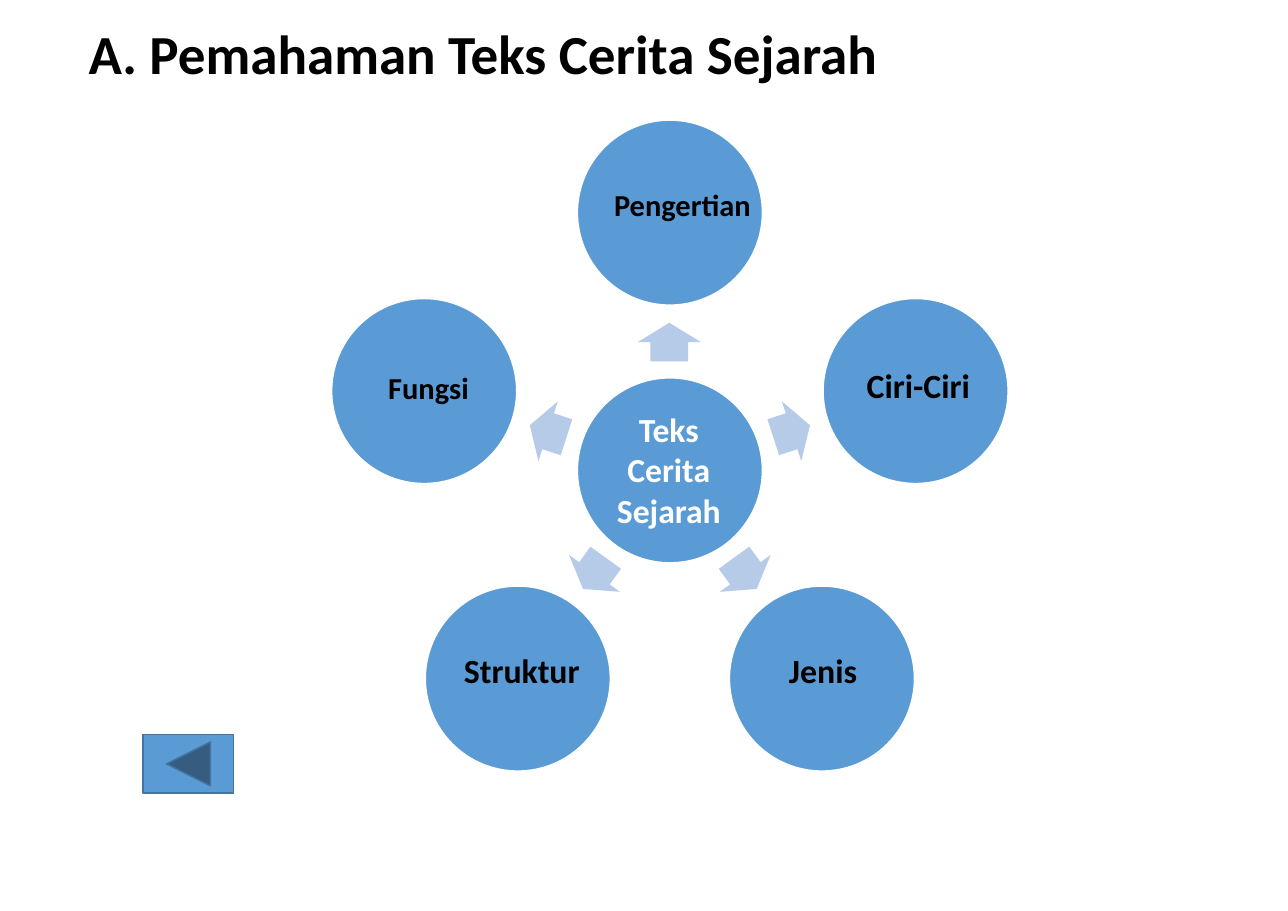
import math
import pptx
import pptx.util
from pptx.dml.color import RGBColor
from pptx.enum.shapes import MSO_SHAPE
from pptx.enum.text import MSO_ANCHOR, PP_ALIGN

PX = 9144
BLUE = RGBColor(0x5B, 0x9B, 0xD5)
PALE = RGBColor(0xB5, 0xCB, 0xE7)
EDGE = RGBColor(0x43, 0x73, 0x9E)
WHITE = RGBColor(0xFF, 0xFF, 0xFF)
BLACK = RGBColor(0x00, 0x00, 0x00)

HUB_X, HUB_Y = 608, 427
CIRCLE = 168
ARROW_W, ARROW_H = 35, 57
RING, ARROW_RING = 234, 116

prs = pptx.Presentation()
prs.slide_width, prs.slide_height = 1169 * PX, 827 * PX
s = prs.slides.add_slide(prs.slide_layouts[6])


def add_shape(kind, x, y, w, h, fill, line=None):
    sp = s.shapes.add_shape(kind, x * PX, y * PX, w * PX, h * PX)
    sp.shadow.inherit = False
    sp.fill.solid()
    sp.fill.fore_color.rgb = fill
    if line is None:
        sp.line.fill.background()
    else:
        sp.line.color.rgb = line
        sp.line.width = pptx.util.Pt(1)
    return sp


def add_text(text, x, y, w, h, size, color=BLACK):
    tf = s.shapes.add_textbox(x * PX, y * PX, w * PX, h * PX).text_frame
    tf.word_wrap = True
    p = tf.paragraphs[0]
    p.text = text
    p.alignment = PP_ALIGN.CENTER
    p.font.name = "Calibri"
    p.font.size = pptx.util.Pt(size)
    p.font.bold = True
    p.font.color.rgb = color
    return tf


add_text("A. Pemahaman Teks Cerita Sejarah", 0, 13, 877, 70, 36)

add_shape(MSO_SHAPE.OVAL, HUB_X - CIRCLE // 2, HUB_Y - CIRCLE // 2, CIRCLE, CIRCLE, BLUE, WHITE)
tf = add_text("Teks Cerita Sejarah", 548, 367, 118, 118, 22, WHITE)
tf.vertical_anchor = MSO_ANCHOR.MIDDLE
tf.margin_left = tf.margin_right = tf.margin_top = tf.margin_bottom = 3 * PX

labels = [
    ("Pengertian", 536, 164, 167, 43, 19.9),
    ("Ciri-Ciri", 756, 326, 155, 47, 22.1),
    ("Jenis", 668, 585, 158, 47, 22.1),
    ("Struktur", 389, 585, 169, 47, 22.1),
    ("Fungsi", 308, 330, 162, 43, 19.9),
]
for i, label in enumerate(labels):
    degrees = 360 * i // len(labels) - 90
    dx, dy = math.cos(math.radians(degrees)), math.sin(math.radians(degrees))
    arrow = add_shape(MSO_SHAPE.RIGHT_ARROW,
                      round(HUB_X + ARROW_RING * dx - ARROW_W / 2),
                      round(HUB_Y + ARROW_RING * dy - ARROW_H / 2),
                      ARROW_W, ARROW_H, PALE)
    arrow.adjustments[0], arrow.adjustments[1] = 0.6, 0.5
    arrow.rotation = degrees % 360
    add_shape(MSO_SHAPE.OVAL,
              round(HUB_X + RING * dx - CIRCLE / 2),
              round(HUB_Y + RING * dy - CIRCLE / 2),
              CIRCLE, CIRCLE, BLUE, WHITE)
    add_text(*label)

add_shape(MSO_SHAPE.ACTION_BUTTON_BACK_OR_PREVIOUS, 130, 667, 82, 53, BLUE, EDGE)

prs.save("out.pptx")
